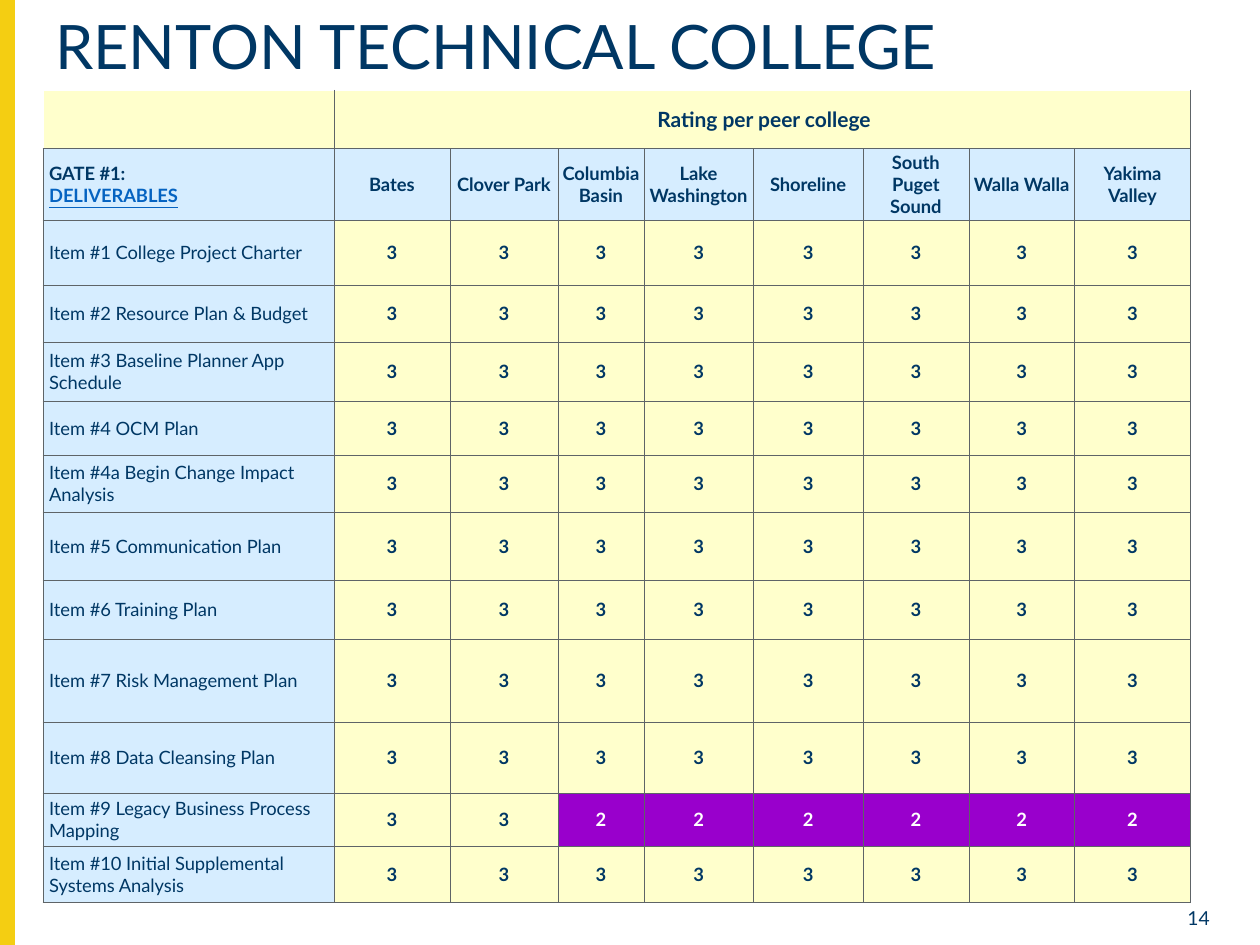
from lxml import etree
from pptx import Presentation
from pptx.dml.color import RGBColor
from pptx.enum.shapes import MSO_SHAPE
from pptx.enum.text import MSO_ANCHOR, PP_ALIGN
from pptx.oxml.ns import qn
from pptx.util import Inches, Pt

LEFT, CENTER, RIGHT = PP_ALIGN.LEFT, PP_ALIGN.CENTER, PP_ALIGN.RIGHT
TOP, MIDDLE = MSO_ANCHOR.TOP, MSO_ANCHOR.MIDDLE
NAVY, GOLD, CREAM, SKY = "003764", "F4CE12", "FFFFCC", "D6EDFF"
PURPLE, WHITE, GRAY, LINK = "9900CC", "FFFFFF", "5E6467", "0563C1"

# Content
TITLE = "RENTON TECHNICAL COLLEGE"
PAGE = "14"
COLLEGES = ["Bates", "Clover Park", "Columbia Basin", "Lake Washington",
            "Shoreline", "South Puget Sound", "Walla Walla", "Yakima Valley"]
ALL_THREE = [3] * len(COLLEGES)
ITEMS = [  # deliverable, row height, rating per college
    ("Item #1 College Project Charter", 0.52, ALL_THREE),
    ("Item #2 Resource Plan & Budget", 0.45, ALL_THREE),
    ("Item #3 Baseline Planner App Schedule", 0.47, ALL_THREE),
    ("Item #4 OCM Plan", 0.43, ALL_THREE),
    ("Item #4a Begin Change Impact Analysis", 0.45, ALL_THREE),
    ("Item #5 Communication Plan", 0.54, ALL_THREE),
    ("Item #6 Training Plan", 0.47, ALL_THREE),
    ("Item #7 Risk Management Plan", 0.66, ALL_THREE),
    ("Item #8 Data Cleansing Plan", 0.56, ALL_THREE),
    ("Item #9 Legacy Business Process Mapping", 0.42, [3, 3, 2, 2, 2, 2, 2, 2]),
    ("Item #10 Initial Supplemental Systems Analysis", 0.45, ALL_THREE),
]
COL_WIDTHS = [2.31, 0.92, 0.86, 0.68, 0.87, 0.87, 0.84, 0.84, 0.92]
ROW_HEIGHTS = [0.46, 0.56] + [height for _, height, _ in ITEMS]
RATING_FILL = {3: (CREAM, NAVY), 2: (PURPLE, WHITE)}
LABEL_MARGINS = (0.05, 0, 0.02, 0)
RATING_MARGINS = (0.03, 0.02, 0.03, 0.02)


def rgb(value):
    return RGBColor.from_string(value)


def write(p, text, size=10.5, color=NAVY, bold=False, underline=False, align=LEFT):
    p.alignment = align
    r = p.add_run()
    r.text = text
    r.font.name = "Lato"
    r.font.size = Pt(size)
    r.font.bold = bold
    r.font.underline = underline
    r.font.color.rgb = rgb(color)


def add_text(s, box, text, anchor, **style):
    tf = s.shapes.add_textbox(*map(Inches, box)).text_frame
    tf.word_wrap = True
    tf.vertical_anchor = anchor
    write(tf.paragraphs[0], text, **style)
    return tf.paragraphs[0]


def set_borders(cell, white_sides=()):
    tc_pr = cell._tc.get_or_add_tcPr()
    for i, side in enumerate(("lnL", "lnR", "lnT", "lnB")):
        white = side in white_sides
        ln = etree.Element(qn("a:" + side), w=str(Pt(1 if white else 0.25)))
        fill = etree.SubElement(ln, qn("a:solidFill"))
        etree.SubElement(fill, qn("a:srgbClr"), val=WHITE if white else GRAY)
        tc_pr.insert(i, ln)


def style_cell(cell, fill, margins, white_sides=()):
    cell.fill.solid()
    cell.fill.fore_color.rgb = rgb(fill)
    cell.vertical_anchor = MIDDLE
    (cell.margin_left, cell.margin_top,
     cell.margin_right, cell.margin_bottom) = map(Inches, margins)
    set_borders(cell, white_sides)
    return cell.text_frame.paragraphs[0]


prs = Presentation()
prs.slide_width, prs.slide_height = Inches(10), Inches(7.5)
s = prs.slides.add_slide(prs.slide_layouts[6])

# Side stripe
stripe = s.shapes.add_shape(MSO_SHAPE.RECTANGLE, 0, 0, Inches(0.11), Inches(7.5))
stripe.shadow.inherit = False
stripe.fill.solid()
stripe.fill.fore_color.rgb = rgb(GOLD)
stripe.line.color.rgb = rgb(GOLD)
stripe.line.width = Pt(1)

# Page number and title
add_text(s, (9.2, 7.14, 0.5, 0.21), PAGE, TOP, size=11, align=RIGHT)
add_text(s, (0.34, 0.1, 8.95, 0.58), TITLE, MIDDLE, size=35).line_spacing = 0.9

# Ratings table
table = s.shapes.add_table(
    len(ROW_HEIGHTS), len(COL_WIDTHS), Inches(0.34), Inches(0.72),
    Inches(sum(COL_WIDTHS)), Inches(sum(ROW_HEIGHTS))).table
table.first_row = table.horz_banding = False
for column, width in zip(table.columns, COL_WIDTHS):
    column.width = Inches(width)
for row, height in zip(table.rows, ROW_HEIGHTS):
    row.height = Inches(height)

# Banner row
style_cell(table.cell(0, 0), CREAM, LABEL_MARGINS, ("lnL", "lnT"))
for c in range(1, len(COL_WIDTHS)):
    style_cell(table.cell(0, c), CREAM, LABEL_MARGINS, ("lnT",))
banner = table.cell(0, 1)
banner.merge(table.cell(0, len(COLLEGES)))
write(banner.text_frame.paragraphs[0], "Rating per peer college",
      size=12, bold=True, align=CENTER)

# College names
p = style_cell(table.cell(1, 0), SKY, LABEL_MARGINS)
write(p, "GATE #1:", bold=True)
p.add_line_break()
write(p, "DELIVERABLES", color=LINK, bold=True, underline=True)
for c, college in enumerate(COLLEGES, 1):
    p = style_cell(table.cell(1, c), SKY, RATING_MARGINS)
    write(p, college, bold=True, align=CENTER)

# Deliverables and ratings
for r, (item, _, ratings) in enumerate(ITEMS, 2):
    write(style_cell(table.cell(r, 0), SKY, LABEL_MARGINS), item)
    for c, rating in enumerate(ratings, 1):
        fill, color = RATING_FILL[rating]
        p = style_cell(table.cell(r, c), fill, RATING_MARGINS)
        write(p, str(rating), color=color, bold=True, align=CENTER)

prs.save("out.pptx")
